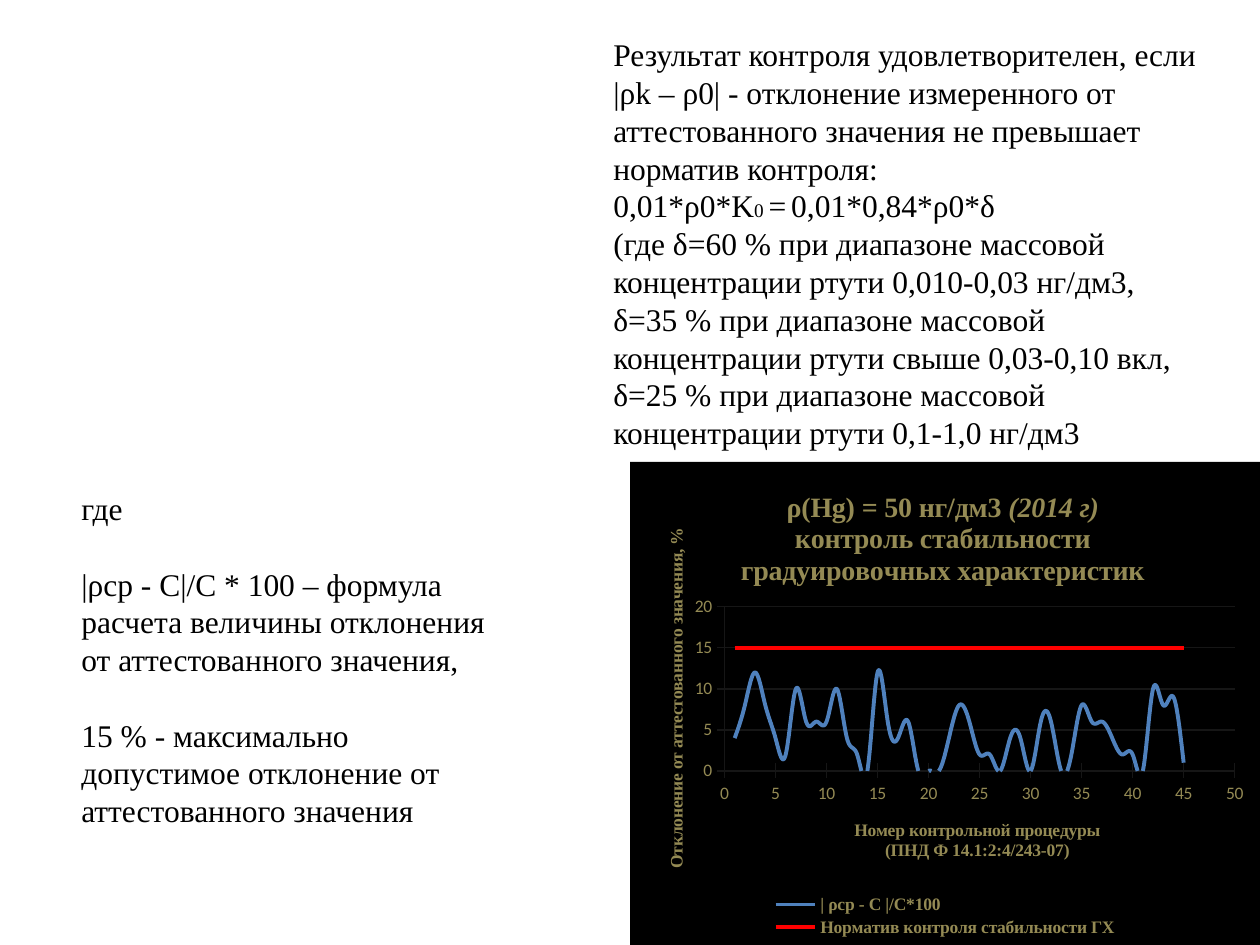
import pptx
import pptx.chart.data
import pptx.dml.color
import pptx.enum.chart
import pptx.enum.text
import pptx.oxml
import pptx.oxml.ns
import pptx.util

SCALE = 914400 / 126
HUES = {"ink": "000000", "gold": "948A54", "grid": "161616",
        "blue": "4F81BD", "red": "FF0000"}
SERIF, SANS = "Times New Roman", "Calibri"
CHART = (630, 462, 630, 483)
LIMIT = 15
DRIFT = [4, 8, 12, 8, 4, 2, 10, 6, 6, 6, 10, 4, 2, 0, 12,
         6, 4, 6, 0, 0, 0, 4, 8, 6, 2, 2, 0, 4, 4, 0,
         6, 6, 0, 2, 8, 6, 6, 4, 2, 2, 0, 10, 8, 9, 1]
TERMS = ["где",
         "|ρср - С|/С * 100 – формула расчета величины отклонения от аттестованного значения,",
         "15 % - максимально допустимое отклонение от аттестованного значения"]
RULES = ["Результат контроля удовлетворителен, если",
         "|ρk – ρ0| - отклонение измеренного от аттестованного значения не превышает норматив контроля:",
         [("0,01*ρ0*K", 18), ("0 ", 11), ("=", 18), (" ", 11), ("0,01*0,84*ρ0*δ", 18)],
         "(где δ=60 % при диапазоне массовой концентрации ртути 0,010-0,03 нг/дм3,",
         "δ=35 % при диапазоне массовой концентрации ртути свыше 0,03-0,10 вкл,",
         "δ=25 % при диапазоне массовой концентрации ртути 0,1-1,0 нг/дм3"]


def px(num):
    return round(num * SCALE)


def apply(obj, **vals):
    for key, val in vals.items():
        setattr(obj, key, val)


def hue(name):
    return pptx.dml.color.RGBColor.from_string(HUES[name])


def style(font, size, color, name=SERIF, bold=False):
    apply(font, size=pptx.util.Pt(size), name=name, bold=bold)
    font.color.rgb = hue(color)


def stroke(line, color, width):
    line.color.rgb = hue(color)
    line.width = pptx.util.Pt(width)


def place(node, left, top, wide=0, high=0):
    """Fix a chart part at slide pixels."""
    for old in node.findall(pptx.oxml.ns.qn("c:layout")):
        node.remove(old)
    x, y, w, h = CHART
    parts = {"x": (left - x) / w, "y": (top - y) / h}
    if wide:
        parts.update(w=wide / w, h=high / h)
    inner = '<c:layoutTarget val="inner"/>' if node.tag.endswith("plotArea") else ""
    modes = "".join(f'<c:{key}Mode val="edge"/>' for key in "xy")
    sizes = "".join(f'<c:{key} val="{val:.2f}"/>' for key, val in parts.items())
    layout = pptx.oxml.parse_xml(
        f'<c:layout {pptx.oxml.ns.nsdecls("c")}><c:manualLayout>'
        f'{inner}{modes}{sizes}</c:manualLayout></c:layout>')
    over = node.find(pptx.oxml.ns.qn("c:overlay"))
    if over is None:
        node.insert(0, layout)
    else:
        over.addprevious(layout)


class Deck:
    def __init__(self):
        self.file = pptx.Presentation()
        apply(self.file, slide_width=px(1260), slide_height=px(945))
        self.slide = self.file.slides.add_slide(self.file.slide_layouts[6])

    def text(self, box, paras, gap=0):
        frame = self.slide.shapes.add_textbox(*map(px, box)).text_frame
        apply(frame, word_wrap=True,
              auto_size=pptx.enum.text.MSO_AUTO_SIZE.SHAPE_TO_FIT_TEXT)
        for num, runs in enumerate(paras):
            para = frame.add_paragraph() if num else frame.paragraphs[0]
            if num and gap:
                para.space_before = pptx.util.Pt(gap)
            for words, size in [(runs, 18)] if isinstance(runs, str) else runs:
                run = para.add_run()
                run.text = words
                style(run.font, size, "ink")

    def title(self, part, lines, size, spot):
        """Write a title as lines of (words, italic) runs."""
        frame = part.text_frame
        for num, runs in enumerate(lines):
            para = frame.add_paragraph() if num else frame.paragraphs[0]
            style(para.font, size, "gold", bold=True)
            for words, slant in runs:
                run = para.add_run()
                run.text = words
                style(run.font, size, "gold", bold=True)
                run.font.italic = slant
        place(part._element, *spot)
        return frame

    def axis(self, axis, top, step, code):
        ticks = pptx.enum.chart.XL_TICK_MARK
        apply(axis, minimum_scale=0, maximum_scale=top, major_unit=step,
              major_tick_mark=ticks.CROSS, minor_tick_mark=ticks.NONE)
        apply(axis.tick_labels, number_format=code, number_format_is_linked=False)
        style(axis.tick_labels.font, 10, "gold", SANS)
        stroke(axis.format.line, "grid", 0.75)

    def chart(self):
        data = pptx.chart.data.XyChartData()
        for name, vals in (("| ρcp - C |/C*100", DRIFT),
                           ("Норматив контроля стабильности ГХ", [LIMIT] * len(DRIFT))):
            row = data.add_series(name)
            for num, val in enumerate(vals, 1):
                row.add_data_point(num, val)
        kind = pptx.enum.chart.XL_CHART_TYPE.XY_SCATTER_SMOOTH_NO_MARKERS
        chart = self.slide.shapes.add_chart(kind, *map(px, CHART), data).chart
        style(chart.font, 10, "ink", SANS)
        root = chart._chartSpace
        root.find(pptx.oxml.ns.qn("c:chart")).addnext(pptx.oxml.parse_xml(
            f'<c:spPr {pptx.oxml.ns.nsdecls("c", "a")}><a:solidFill><a:srgbClr '
            f'val="{HUES["ink"]}"/></a:solidFill><a:ln><a:noFill/></a:ln></c:spPr>'))
        chart.plots[0].vary_by_categories = False
        for row, color in zip(chart.plots[0].series, ("blue", "red")):
            stroke(row.format.line, color, 2.25)
            row._element.find(pptx.oxml.ns.qn("c:smooth")).set("val", "1")

        across, up = chart.category_axis, chart.value_axis
        self.axis(across, 50, 5, "General")
        self.axis(up, 20, 5, "0")
        apply(across, has_major_gridlines=False)
        stroke(up.major_gridlines.format.line, "grid", 0.75)
        place(root.chart.plotArea, 727, 605, 511, 162)

        self.title(chart.chart_title,
                   [[("ρ(Hg) = 50 нг/дм3 ", False), ("(2014 г)", True)],
                    [("контроль стабильности градуировочных характеристик", False)]],
                   16, (739, 484))
        self.title(across.axis_title,
                   [[("Номер контрольной процедуры", False)],
                    [("(ПНД Ф 14.1:2:4/243-07)", False)]], 10, (849, 815))
        side = self.title(up.axis_title,
                          [[("Отклонение от аттестованного значения, %", False)]],
                          10, (660, 526))
        side._txBody.bodyPr.set("rot", "-5400000")
        side._txBody.bodyPr.set("vert", "horz")

        chart.has_legend = True
        apply(chart.legend, include_in_layout=False,
              position=pptx.enum.chart.XL_LEGEND_POSITION.BOTTOM)
        style(chart.legend.font, 10, "gold", bold=True)
        place(chart.legend._element, 770, 892, 350, 50)


def main():
    deck = Deck()
    deck.chart()
    deck.text((69, 483, 444, 394), TERMS, gap=21.5)
    deck.text((601, 29, 620, 432), RULES)
    deck.file.save("out.pptx")


if __name__ == "__main__":
    main()
